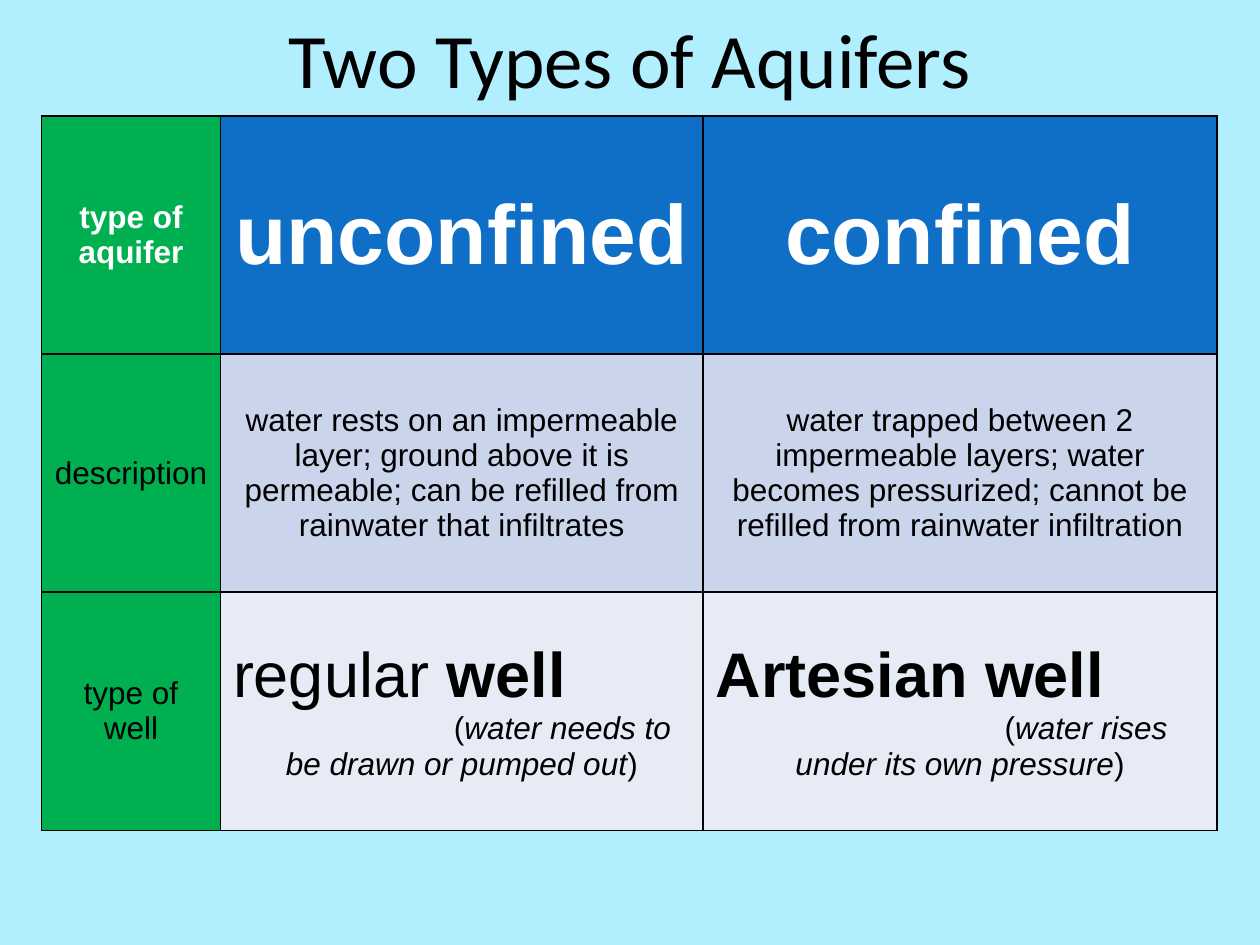
from dataclasses import dataclass

from lxml.etree import SubElement
from pptx import Presentation
from pptx.dml.color import RGBColor
from pptx.enum.text import MSO_ANCHOR, PP_ALIGN
from pptx.oxml.ns import qn
from pptx.util import Inches, Pt

SLIDE_W, SLIDE_H = 10, 7.5
COL_WIDTHS = (1.42, 3.83, 4.08)
ROW_HEIGHT = 1.89
TABLE_LEFT, TABLE_TOP = 0.33, 0.92
GREEN, BLUE, BAND, PALE = "00B050", "0F6FC6", "CAD4EA", "E6EBF5"
BLACK, WHITE = "000000", "FFFFFF"


@dataclass
class Run:
    text: str
    size: float = 18
    bold: bool = False
    italic: bool = False
    color: str = BLACK
    font: str = "Arial"


@dataclass
class Para:
    runs: list[Run]
    align: PP_ALIGN = PP_ALIGN.CENTER
    indent: float = 0


@dataclass
class Cell:
    fill: str
    paras: list[Para]


def rgb(color: str) -> RGBColor:
    return RGBColor.from_string(color)


def write(tf, paras: list[Para]) -> None:
    for i, para in enumerate(paras):
        p = tf.paragraphs[0] if i == 0 else tf.add_paragraph()
        p.alignment = para.align
        if para.indent:
            pPr = p._p.get_or_add_pPr()
            pPr.set("marL", "0")
            pPr.set("indent", str(Inches(para.indent)))
        for run in para.runs:
            r = p.add_run()
            r.text = run.text
            r.font.size = Pt(run.size)
            r.font.bold = run.bold
            r.font.italic = run.italic
            r.font.name = run.font
            r.font.color.rgb = rgb(run.color)


def add_borders(cell, color: str, width: float) -> None:
    tcPr = cell._tc.get_or_add_tcPr()
    for i, side in enumerate(("a:lnL", "a:lnR", "a:lnT", "a:lnB")):
        ln = tcPr.makeelement(qn(side), {"w": str(Pt(width))})
        fill = SubElement(ln, qn("a:solidFill"))
        SubElement(fill, qn("a:srgbClr"), val=color)
        tcPr.insert(i, ln)  # borders come before the cell fill


def line(text: str, **style) -> list[Para]:
    return [Para([Run(text, **style)])]


def well(name: list[Run], note: str, indent: float) -> list[Para]:
    """Name of a well, then a bracketed note whose first line is indented."""
    note_runs = [Run("("), Run(note, italic=True), Run(")")]
    return [Para(name, PP_ALIGN.LEFT), Para(note_runs, indent=indent)]


def add_title(slide, text: str) -> None:
    width = 0.9 * SLIDE_W
    sp = slide.shapes.add_textbox(Inches((SLIDE_W - width) / 2), 0,
                                  Inches(width), Inches(TABLE_TOP))
    tf = sp.text_frame
    tf.word_wrap = True
    tf.vertical_anchor = MSO_ANCHOR.MIDDLE
    write(tf, line(text, size=44, font="Calibri"))


def add_grid(slide, rows: list[list[Cell]]) -> None:
    table = slide.shapes.add_table(
        len(rows), len(COL_WIDTHS), Inches(TABLE_LEFT), Inches(TABLE_TOP),
        Inches(sum(COL_WIDTHS)), Inches(ROW_HEIGHT * len(rows))).table
    table.horz_banding = False
    for col, width in zip(table.columns, COL_WIDTHS):
        col.width = Inches(width)
    for r, row in enumerate(rows):
        table.rows[r].height = Inches(ROW_HEIGHT)
        for c, spec_cell in enumerate(row):
            cell = table.cell(r, c)
            cell.vertical_anchor = MSO_ANCHOR.MIDDLE
            cell.fill.solid()
            cell.fill.fore_color.rgb = rgb(spec_cell.fill)
            add_borders(cell, BLACK, 1)
            write(cell.text_frame, spec_cell.paras)


ROWS = [
    [Cell(GREEN, line("type of aquifer", bold=True, color=WHITE)),
     Cell(BLUE, line("unconfined", size=48, bold=True, color=WHITE)),
     Cell(BLUE, line("confined", size=48, bold=True, color=WHITE))],
    [Cell(GREEN, line("description")),
     Cell(BAND, line("water rests on an impermeable layer; ground above it is "
                     "permeable; can be refilled from rainwater that infiltrates")),
     Cell(BAND, line("water trapped between 2 impermeable layers; water becomes "
                     "pressurized; cannot be refilled from rainwater infiltration"))],
    [Cell(GREEN, line("type of well")),
     Cell(PALE, well([Run("regular ", 36), Run("well", 36, bold=True)],
                     "water needs to be drawn or pumped out", 1.6)),
     Cell(PALE, well([Run("Artesian well", 36, bold=True)],
                     "water rises under its own pressure", 2))],
]


def main() -> None:
    prs = Presentation()
    prs.slide_width, prs.slide_height = Inches(SLIDE_W), Inches(SLIDE_H)
    slide = prs.slides.add_slide(prs.slide_layouts[6])
    slide.background.fill.solid()
    slide.background.fill.fore_color.rgb = rgb("B1EEFE")
    add_title(slide, "Two Types of Aquifers")
    add_grid(slide, ROWS)
    prs.save("out.pptx")


if __name__ == "__main__":
    main()
